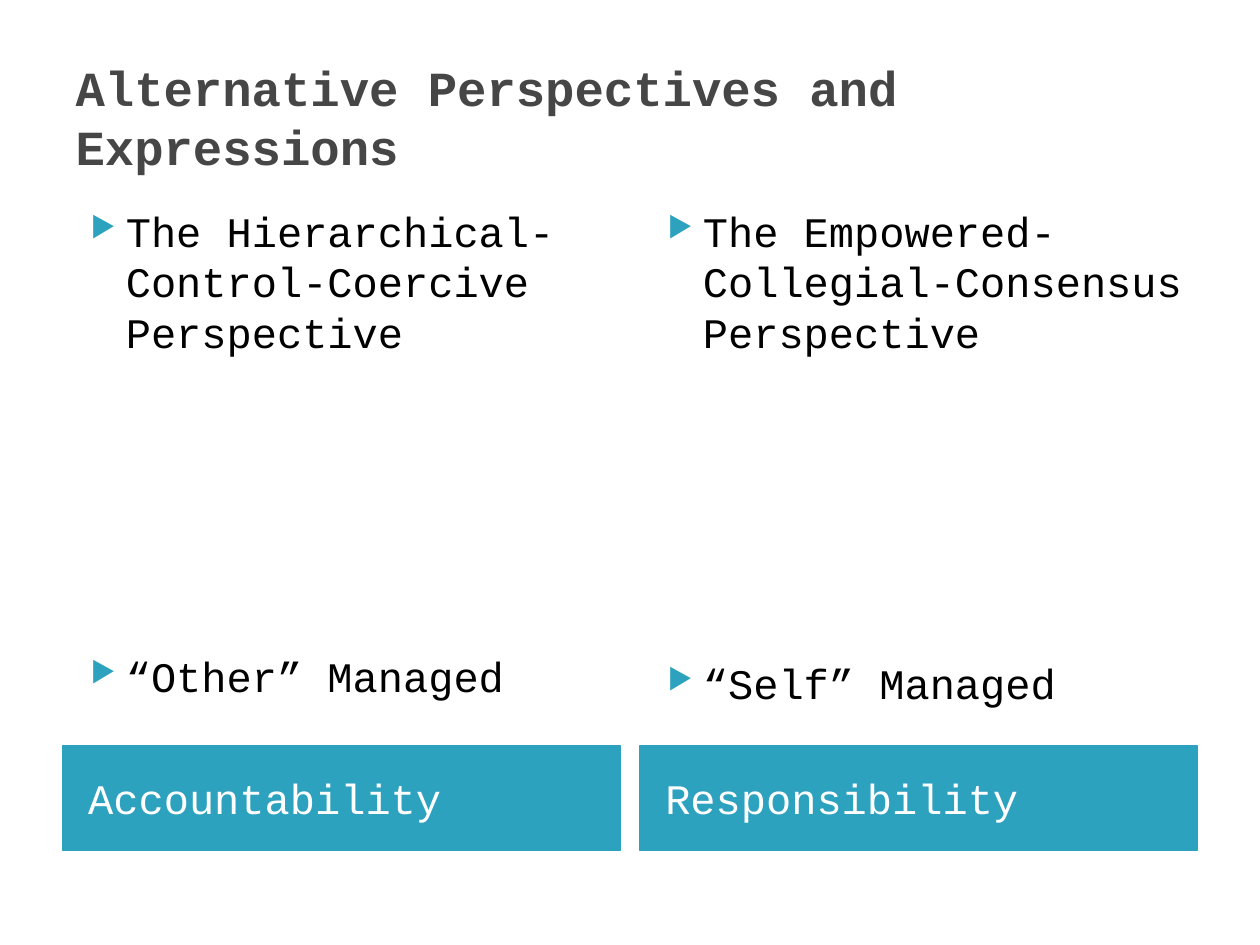
from dataclasses import dataclass
from lxml.etree import SubElement as Sub
from pptx import Presentation as Deck
from pptx.dml.color import RGBColor as Rgb
from pptx.enum.shapes import MSO_SHAPE as Kind
from pptx.enum.text import MSO_ANCHOR as Anchor, PP_ALIGN as Align
from pptx.oxml.ns import qn
from pptx.util import Inches, Pt


@dataclass(frozen=True)
class Theme:
    face: str = "Courier New"
    head: str = "464646"
    body: str = "000000"
    bar: str = "2DA2BF"
    light: str = "FFFFFF"
    big: int = 28
    mid: int = 24


T = Theme()
WIDE, HIGH = Inches(10), Inches(7.5)

# Two columns, as shares of the slide's width
LEFT, COL, STEP = 0.05, 0.442, 0.458

# Each column: first point, last point, gap between them (pt), bar label
SIDES = [
    ("The Hierarchical-Control-Coercive Perspective",
     "“Other” Managed", 168, "Accountability"),
    ("The Empowered-Collegial-Consensus Perspective",
     "“Self” Managed", 172, "Responsibility"),
]


def area(x, y, w, h):
    """Turn shares of the slide into lengths."""
    return [round(v) for v in (x * WIDE, y * HIGH, w * WIDE, h * HIGH)]


def style(item, **vals):
    for key, val in vals.items():
        setattr(item, key, val)


def write(para, text, size, color, bold=False):
    run = para.add_run()
    run.text = text
    style(run.font, name=T.face, size=Pt(size), bold=bold)
    run.font.color.rgb = Rgb.from_string(color)


def mark(para):
    """Give a paragraph a coloured arrow bullet and hanging indent."""
    props = para._p.get_or_add_pPr()
    style_vals = {"marL": Inches(0.4), "indent": Inches(-0.28)}
    for key, val in style_vals.items():
        props.set(key, str(val))
    tint = Sub(props, qn("a:buClr"))
    Sub(tint, qn("a:srgbClr"), val=T.bar)
    Sub(props, qn("a:buSzPct"), val="68000")
    Sub(props, qn("a:buChar"), char="▶")


def add_title(slide, text):
    title = slide.shapes.title
    spot = area(LEFT, 0.04, 0.9, 0.167)
    style(title, **dict(zip(("left", "top", "width", "height"), spot)))
    frame = title.text_frame
    style(frame, vertical_anchor=Anchor.MIDDLE, word_wrap=True)
    para = frame.paragraphs[0]
    para.alignment = Align.LEFT
    write(para, text, T.big, T.head, True)


def add_points(slide, x, first, last, gap):
    box = slide.shapes.add_textbox(*area(x, 0.211, COL, 0.575))
    frame = box.text_frame
    frame.word_wrap = True
    top, low = frame.paragraphs[0], frame.add_paragraph()
    for para, text in ((top, first), (low, last)):
        mark(para)
        write(para, text, T.mid, T.body)
    low.space_before = Pt(gap)


def add_bar(slide, x, text):
    bar = slide.shapes.add_shape(Kind.RECTANGLE, *area(x, 0.789, COL, 0.111))
    bar.shadow.inherit = False
    bar.fill.solid()
    for fill in (bar.fill, bar.line):
        target = fill.fore_color if fill is bar.fill else fill.color
        target.rgb = Rgb.from_string(T.bar)
    bar.line.width = Pt(0.75)
    frame = bar.text_frame
    style(frame, margin_left=Inches(0.2), word_wrap=True,
          vertical_anchor=Anchor.MIDDLE)
    para = frame.paragraphs[0]
    para.alignment = Align.LEFT
    write(para, text, T.mid, T.light)


def main():
    deck = Deck()
    style(deck, slide_width=WIDE, slide_height=HIGH)
    slide = deck.slides.add_slide(deck.slide_layouts[5])
    add_title(slide, "Alternative Perspectives and Expressions")
    for i, (first, last, gap, label) in enumerate(SIDES):
        x = LEFT + i * STEP
        add_bar(slide, x, label)
        add_points(slide, x, first, last, gap)
    deck.save("out.pptx")


if __name__ == "__main__":
    main()
